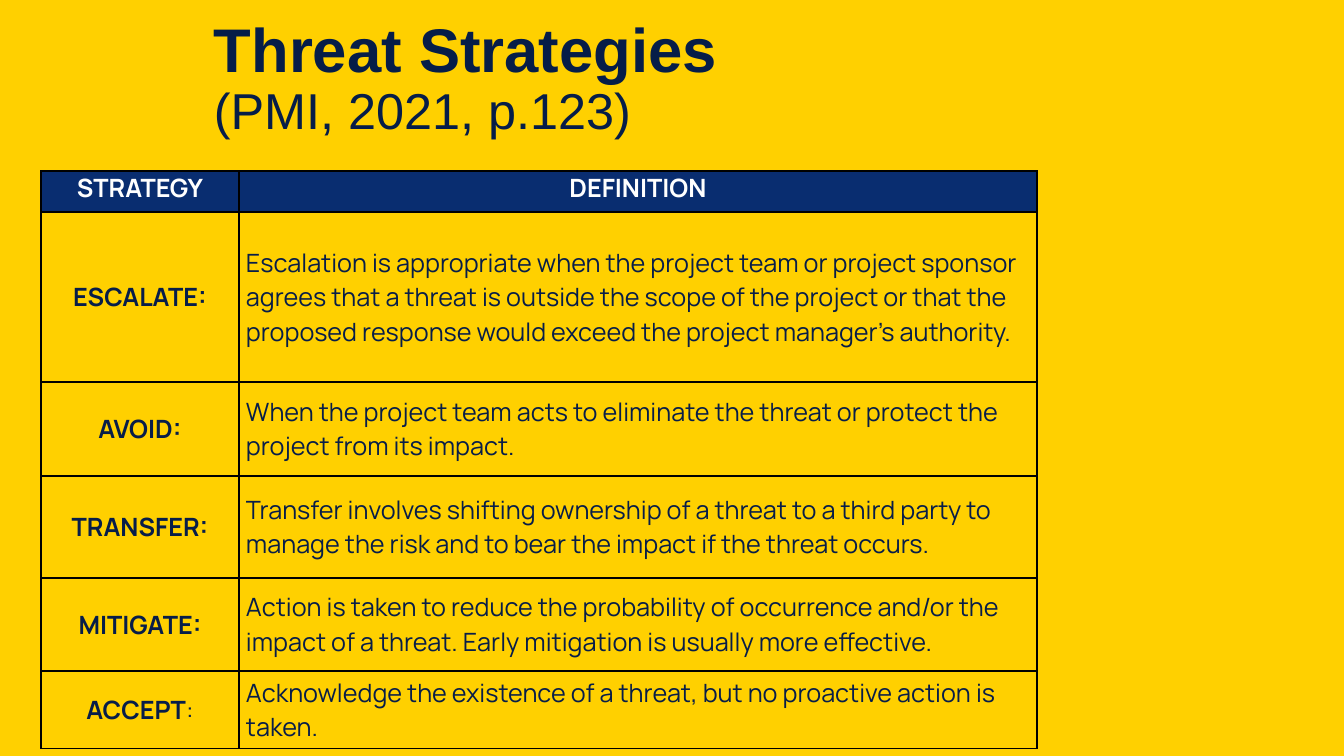
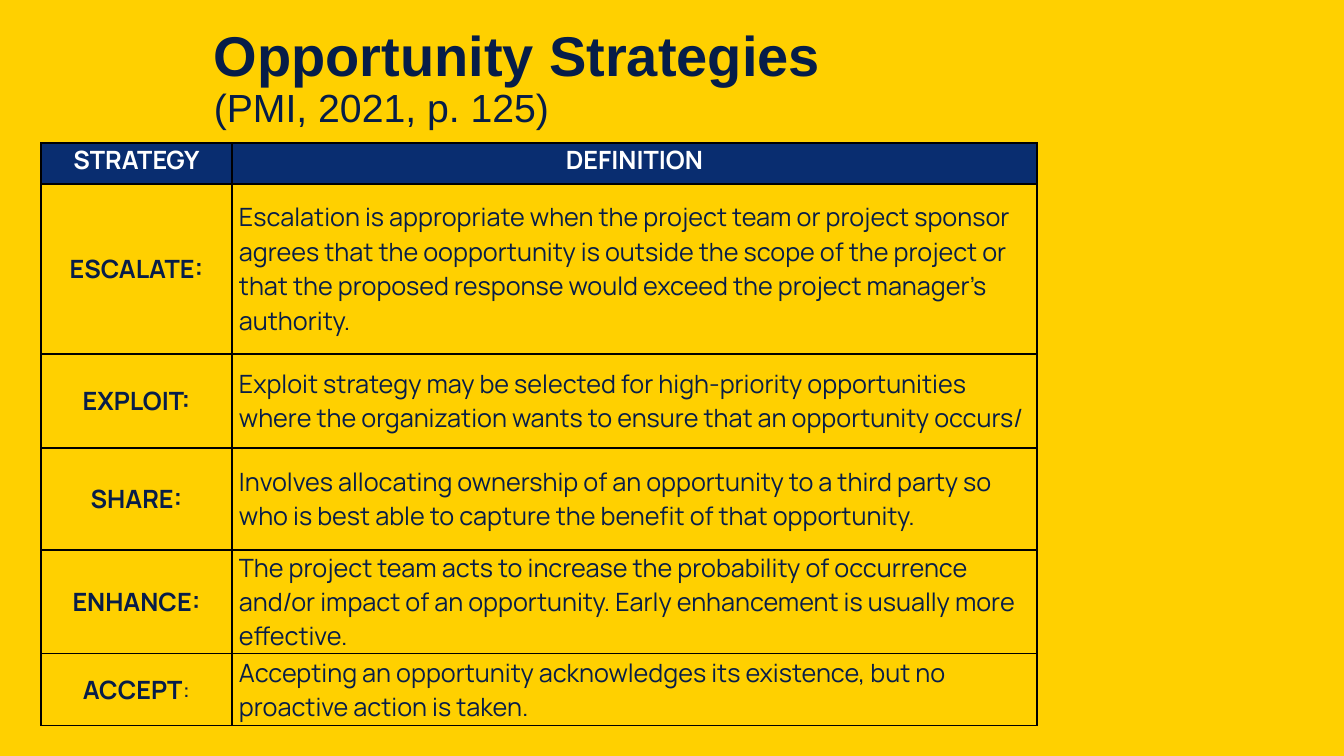
from lxml.etree import SubElement
from pptx import Presentation
from pptx.dml.color import RGBColor
from pptx.enum.text import MSO_ANCHOR, PP_ALIGN
from pptx.oxml.ns import qn
from pptx.util import Emu, Pt

EMU_PER_PX = 914400 / 100.8
YELLOW, NAVY, WHITE, BLACK = "FFD000", "092D70", "FFFFFF", "000000"
TITLE_INK, BODY_INK = "061D48", "071D49"
HEADINGS = ("STRATEGY", "DEFINITION")
TABLE_LEFT, TABLE_WIDTH = 41, 996
UPPER_ROW_HEIGHTS = (41, 170, 94, 102)

THREATS = (
    ("ESCALATE:", "Escalation is appropriate when the project team or project sponsor agrees "
     "that a threat is outside the scope of the project or that the proposed response would "
     "exceed the project manager’s authority."),
    ("AVOID:", "When the project team acts to eliminate the threat or protect the project "
     "from its impact."),
    ("TRANSFER:", "Transfer involves shifting ownership of a threat to a third party to "
     "manage the risk and to bear the impact if the threat occurs."),
    ("MITIGATE:", "Action is taken to reduce the probability of occurrence and/or the impact "
     "of a threat. Early mitigation is usually more effective."),
    ("ACCEPT", "Acknowledge the existence of a threat, but no proactive action is taken."),
)
OPPORTUNITIES = (
    ("ESCALATE:", "Escalation is appropriate when the project team or project sponsor agrees "
     "that the oopportunity is outside the scope of the project or that the proposed response "
     "would exceed the project manager’s authority."),
    ("EXPLOIT:", "Exploit strategy may be selected for high-priority opportunities where the "
     "organization wants to ensure that an opportunity occurs/"),
    ("SHARE:", "Involves allocating ownership of an opportunity to a third party so who is "
     "best able to capture the benefit of that opportunity."),
    ("ENHANCE:", "The project team acts to increase the probability of occurrence and/or "
     "impact of an opportunity. Early enhancement is usually more effective."),
    ("ACCEPT", "Accepting an opportunity acknowledges its existence, but no proactive action "
     "is taken."),
)


def px(length):
    return Emu(round(length * EMU_PER_PX))


def color(value):
    return RGBColor.from_string(value)


def set_all(target, formats):
    for name, value in formats.items():
        setattr(target, name, value)


def add_span(para, text, ink, **formats):
    span = para.add_run()
    span.text = text
    set_all(span.font, formats)
    span.font.color.rgb = color(ink)


def add_title(page, title, source, width, title_size, source_size):
    box = page.shapes.add_textbox(px(204), px(7), px(width), px(146))
    set_all(box.text_frame, {"word_wrap": True, "vertical_anchor": MSO_ANCHOR.MIDDLE})
    para = box.text_frame.paragraphs[0]
    para.line_spacing = 0.9
    add_span(para, title, TITLE_INK, name="Arial", size=Pt(title_size), bold=True)
    para.add_line_break()
    add_span(para, source, TITLE_INK, name="Arial", size=Pt(source_size), bold=False)


def add_borders(cell):
    """Draw all four sides; must run before the cell gets its fill."""
    properties = cell._tc.get_or_add_tcPr()
    for side in ("lnL", "lnR", "lnT", "lnB"):
        line = SubElement(properties, qn(f"a:{side}"), w=str(Pt(1)))
        fill = SubElement(line, qn("a:solidFill"))
        SubElement(fill, qn("a:srgbClr"), val=BLACK)


def fill_cell(cell, text, ink, bold, centered, anchor, fill=None):
    add_borders(cell)
    if fill:
        cell.fill.solid()
        cell.fill.fore_color.rgb = color(fill)
    else:
        cell.fill.background()
    set_all(cell, {"margin_left": px(7), "margin_right": px(7), "margin_top": 0,
                   "margin_bottom": 0, "vertical_anchor": anchor})
    para = cell.text_frame.paragraphs[0]
    para.alignment = PP_ALIGN.CENTER if centered else PP_ALIGN.LEFT
    add_span(para, text, ink, name="Manrope", size=Pt(18), bold=bold)
    return para


def add_strategy_table(page, strategies, top, name_width, lower_heights):
    heights = (*UPPER_ROW_HEIGHTS, *lower_heights)
    table = page.shapes.add_table(len(heights), 2, px(TABLE_LEFT), px(top),
                                  px(TABLE_WIDTH), px(sum(heights))).table
    set_all(table, {"first_row": False, "horz_banding": False})
    for column, width in zip(table.columns, (name_width, TABLE_WIDTH - name_width)):
        column.width = px(width)
    for row, height in zip(table.rows, heights):
        row.height = px(height)
    for column, heading in enumerate(HEADINGS):
        fill_cell(table.cell(0, column), heading, WHITE, True, True, MSO_ANCHOR.TOP, NAVY)
    for row, (name, definition) in enumerate(strategies, start=1):
        para = fill_cell(table.cell(row, 0), name, BODY_INK, True, True, MSO_ANCHOR.MIDDLE)
        if not name.endswith(":"):
            add_span(para, ":", BODY_INK, name="Manrope", size=Pt(18), bold=False)
        fill_cell(table.cell(row, 1), definition, BODY_INK, False, False, MSO_ANCHOR.MIDDLE)


def main():
    deck = Presentation()
    set_all(deck, {"slide_width": px(1344), "slide_height": px(756)})
    backdrop = deck.slide_master.background.fill
    backdrop.solid()
    backdrop.fore_color.rgb = color(YELLOW)
    blank = deck.slide_layouts[6]

    threats = deck.slides.add_slide(blank)
    add_title(threats, "Threat Strategies", "(PMI, 2021, p.123)", 697, 44, 36)
    add_strategy_table(threats, THREATS, top=171, name_width=198, lower_heights=(93, 78))

    opportunities = deck.slides.add_slide(blank)
    add_title(opportunities, "Opportunity Strategies", "(PMI, 2021, p. 125)", 928, 40, 28)
    add_strategy_table(opportunities, OPPORTUNITIES, top=143, name_width=191,
                       lower_heights=(104, 72))

    deck.save("out.pptx")


if __name__ == "__main__":
    main()
